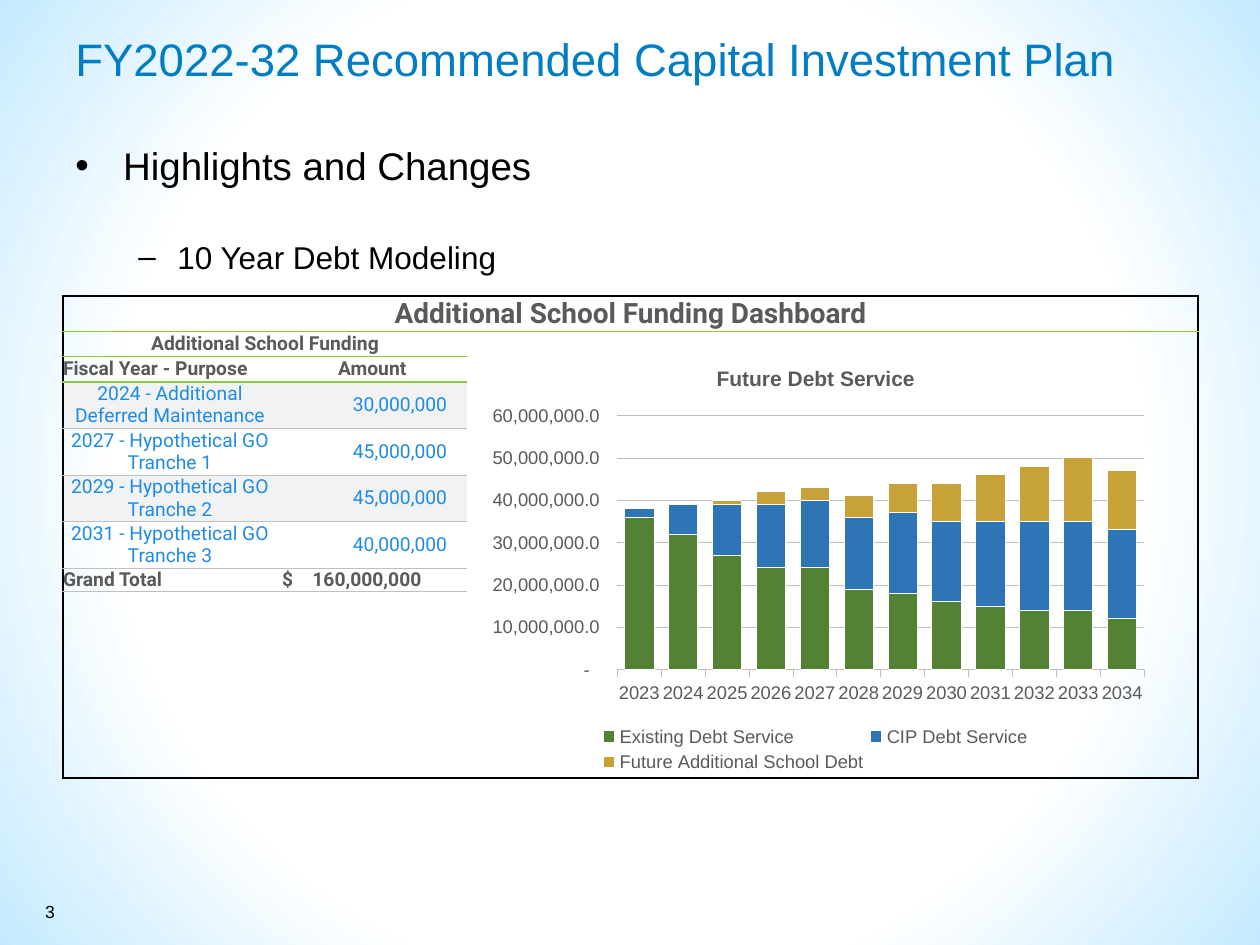
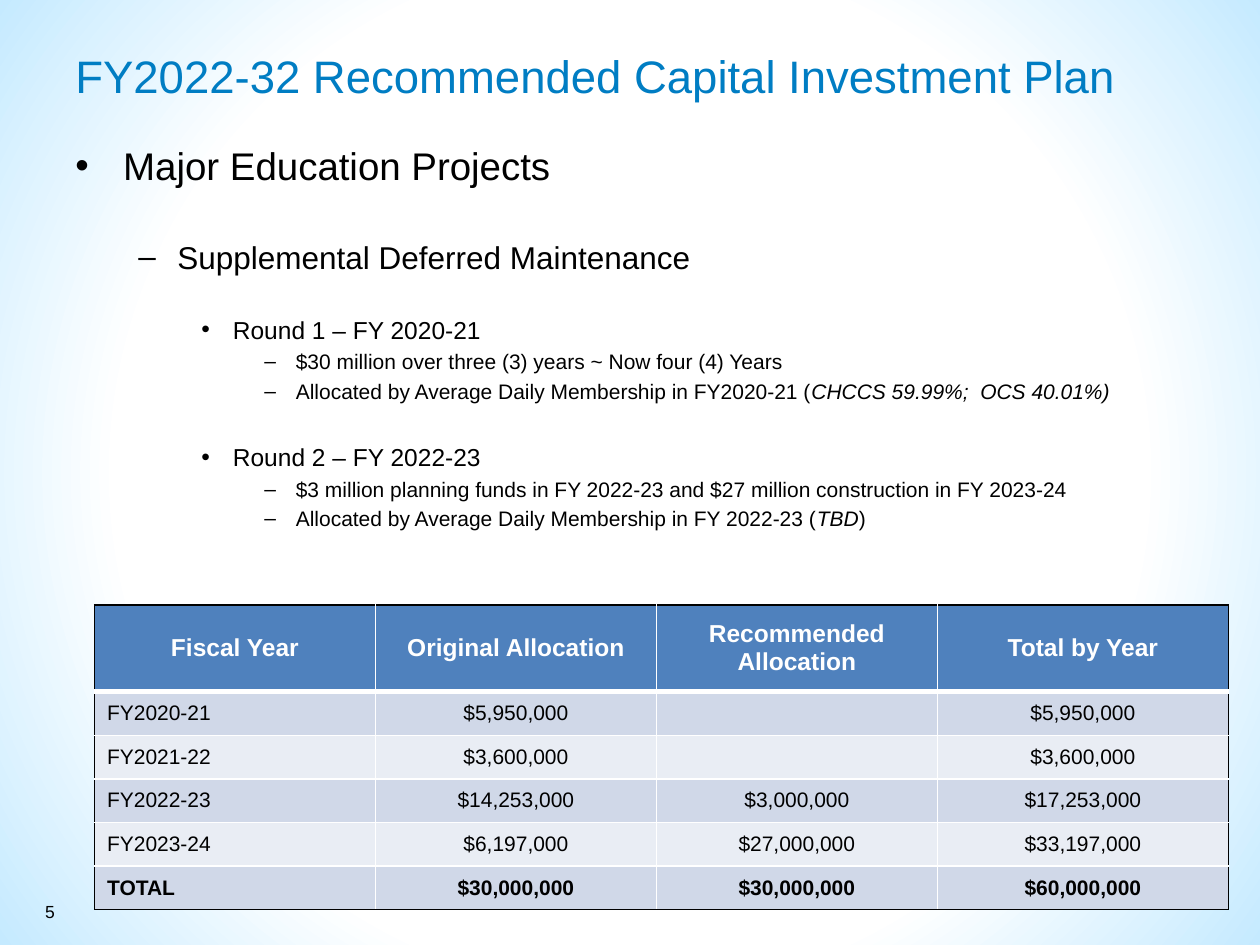
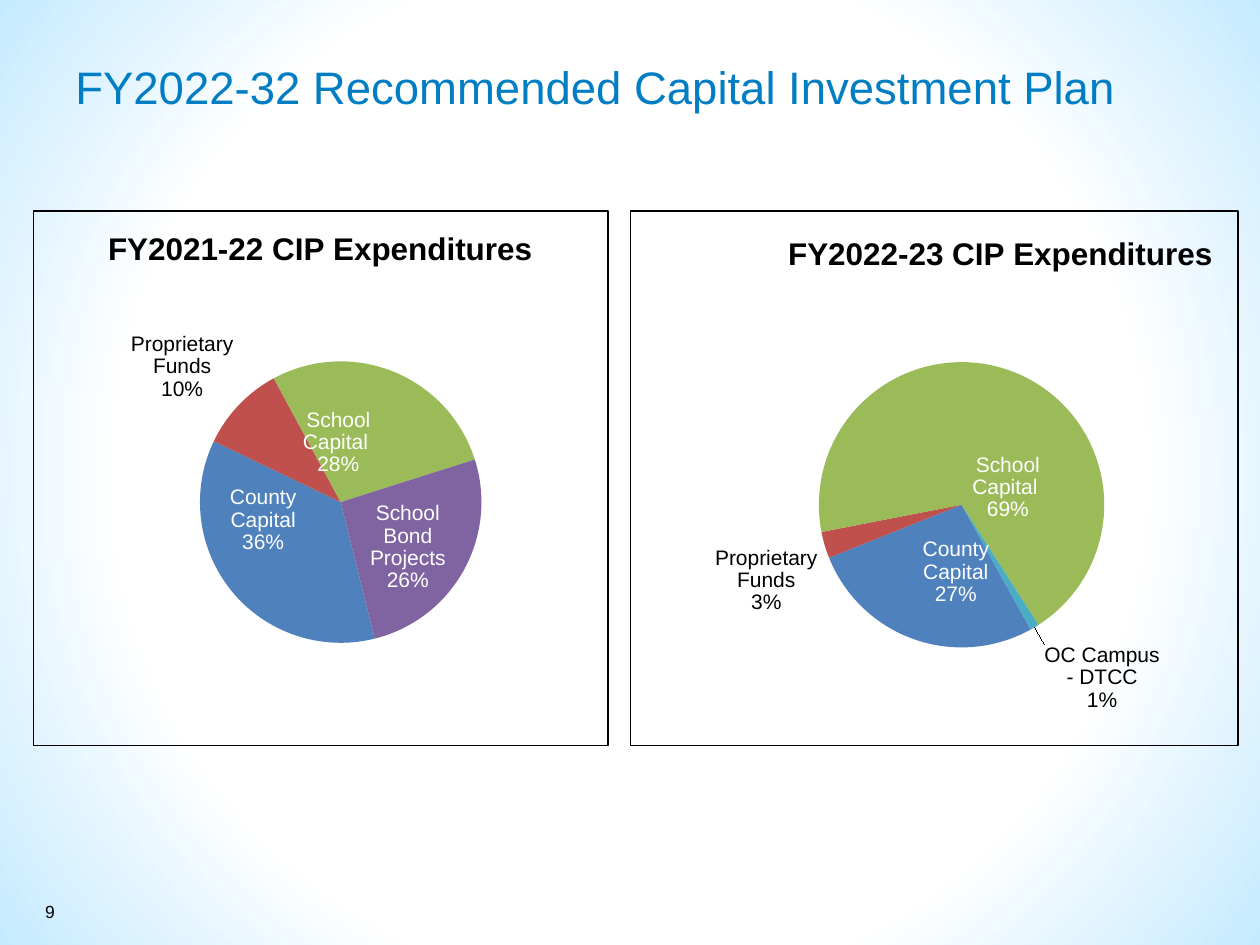
"""Builds three slides of a capital investment plan with tables and charts."""
from collections import defaultdict

from pptx import Presentation
from pptx.chart.data import CategoryChartData
from pptx.dml.color import RGBColor
from pptx.enum.chart import XL_CHART_TYPE as ChartType
from pptx.enum.chart import XL_LABEL_POSITION as LabelPosition
from pptx.enum.chart import XL_LEGEND_POSITION as LegendPosition
from pptx.enum.chart import XL_TICK_MARK as TickMark
from pptx.enum.text import MSO_ANCHOR as Anchor
from pptx.enum.text import PP_ALIGN as Align
from pptx.oxml import parse_xml
from pptx.oxml.ns import nsdecls, qn
from pptx.util import Inches, Pt

COLORS = {
    "black": "000000", "white": "FFFFFF", "sky": "C5EAFF", "title": "007DC3",
    "gray": "5A5A5A", "rule": "BFBFBF", "lime": "8DC63F", "link": "1F8BE5",
    "stripe": "F1F2F3", "header": "4F81BD", "band": "D0D8E8", "pale": "E9EDF4",
    "existing": "548235", "cip": "2E75B6", "future": "C7A239",
    "county": "4F81BD", "proprietary": "C0504D", "school": "9BBB59",
    "bond": "8064A2", "campus": "4BACC6",
}
SANS, DASHBOARD_FONT = "Arial", "Roboto"
NO_STYLE = "{2D5ABB26-0587-4C30-8999-92F81FD0307C}"
TITLE = "FY2022-32 Recommended Capital Investment Plan"

LEVELS = [
    {"size": 22, "left": 0.38, "hang": 0.38, "bullet": "•"},
    {"size": 18, "left": 0.81, "hang": 0.31, "bullet": "–"},
    {"size": 14, "left": 1.25, "hang": 0.25, "bullet": "•"},
    {"size": 12, "left": 1.75, "hang": 0.25, "bullet": "–"},
]
LINE_SPACE, BLANK_LINE = 0.22, 1.36

DEBT_OUTLINE = [
    (0, False, ["Highlights and Changes"]),
    (1, True, ["10 Year Debt Modeling"]),
]
EDUCATION_OUTLINE = [
    (0, False, ["Major Education Projects"]),
    (1, True, ["Supplemental Deferred Maintenance"]),
    (2, True, ["Round 1 – FY 2020-21"]),
    (3, False, ["$30 million over three (3) years ~ Now four (4) Years"]),
    (3, False, ["Allocated by Average Daily Membership in FY2020-21 (",
                "CHCCS 59.99%;  OCS 40.01%)"]),
    (2, True, ["Round 2 – FY 2022-23"]),
    (3, False, ["$3 million planning funds in FY 2022-23 and "
                "$27 million construction in FY 2023-24"]),
    (3, False, ["Allocated by Average Daily Membership in FY 2022-23 (", "TBD", ")"]),
]

FUNDING = [
    ("2024 - Additional Deferred Maintenance", "30,000,000"),
    ("2027 - Hypothetical GO Tranche 1", "45,000,000"),
    ("2029 - Hypothetical GO Tranche 2", "45,000,000"),
    ("2031 - Hypothetical GO Tranche 3", "40,000,000"),
]
FUNDING_COLUMNS = [0.79, 0.91, 1.51, 1.26, 0.91, 1.06, 1.1, 0.68, 0.79]
FUNDING_ROWS = [0.28, 0.2, 0.2] + [(3.83 - 0.68) / 17] * 17

DEBT_YEARS = [str(year) for year in range(2023, 2035)]
DEBT_MILLIONS = [
    ("Existing Debt Service", "existing", [36, 32, 27, 24, 24, 19, 18, 16, 15, 14, 14, 12]),
    ("CIP Debt Service", "cip", [2, 7, 12, 15, 16, 17, 19, 19, 20, 21, 21, 21]),
    ("Future Additional School Debt", "future", [0, 0, 1, 3, 3, 5, 7, 9, 11, 13, 15, 14]),
]
DEBT_FORMAT = '_(* #,##0.0_);_(* \\(#,##0.0\\);_(* "-"?_)'

ALLOCATIONS = [
    ("Fiscal Year", "Original Allocation", "Recommended Allocation", "Total by Year"),
    ("FY2020-21", "$5,950,000", "", "$5,950,000"),
    ("FY2021-22", "$3,600,000", "", "$3,600,000"),
    ("FY2022-23", "$14,253,000", "$3,000,000", "$17,253,000"),
    ("FY2023-24", "$6,197,000", "$27,000,000", "$33,197,000"),
    ("TOTAL", "$30,000,000", "$30,000,000", "$60,000,000"),
]

FUNDS = {
    "County Capital": "county", "Proprietary Funds": "proprietary",
    "School Capital ": "school", "School Bond Projects": "bond",
    "OC Campus - DTCC": "campus",
}
PIES = [
    {"title": "FY2021-22 CIP Expenditures", "box": (0.26, 1.67, 4.57, 4.25),
     "title_at": (0.12, 0.02), "plot": (0.29, 0.28, 0.49, 0.53), "start": 166,
     "values": [36, 10, 28, 26, 0],
     "labels": {0: (-0.04, -0.05), 1: None, 2: (-0.05, 0.01), 3: (0.01, 0.02)}},
    {"title": "FY2022-23 CIP Expenditures", "box": (5, 1.67, 4.83, 4.25),
     "title_at": (0.25, 0.03), "plot": (0.31, 0.28, 0.47, 0.54), "start": 151,
     "values": [27, 3, 69, None, 1],
     "labels": {0: (0.03, 0), 1: None, 2: (0.03, 0.09), 4: (0.01, 0.02)}},
]
OUTSIDE_FUNDS = (1, 4)


def rgb(name):
    return RGBColor.from_string(COLORS[name])


def set_font(font, size, color="black", bold=False, name=SANS):
    font.size, font.bold, font.name = Pt(size), bold, name
    font.color.rgb = rgb(color)


def set_background(master):
    master.background.fill.solid()
    solid = master.element.find(".//" + qn("p:bgPr")).find(qn("a:solidFill"))
    stops = "".join(
        f'<a:gs pos="{share * 1000}"><a:srgbClr val="{COLORS[color]}"/></a:gs>'
        for share, color in [(0, "white"), (65, "white"), (100, "sky")])
    gradient = parse_xml(
        f'<a:gradFill {nsdecls("a")} rotWithShape="1"><a:gsLst>{stops}</a:gsLst>'
        '<a:path path="circle"><a:fillToRect l="50000" t="50000" r="50000" b="50000"/>'
        '</a:path></a:gradFill>')
    solid.getparent().replace(solid, gradient)


def add_text_frame(slide, box):
    text_frame = slide.shapes.add_textbox(*map(Inches, box)).text_frame
    text_frame.word_wrap = True
    return text_frame


def add_slide(presentation, title_top, number):
    slide = presentation.slides.add_slide(presentation.slide_layouts[6])
    title = add_text_frame(slide, (0.5, title_top, 9, 0.7))
    title.text = TITLE
    set_font(title.paragraphs[0].runs[0].font, 26, "title")
    page = add_text_frame(slide, (0.26, 7.1, 0.32, 0.27))
    page.text = str(number)
    set_font(page.paragraphs[0].runs[0].font, 10)
    return slide


def add_outline(slide, items, height):
    text_frame = add_text_frame(slide, (0.5, 1.08, 9, height))
    for index, (depth, gap, segments) in enumerate(items):
        level = LEVELS[depth]
        paragraph = text_frame.add_paragraph() if index else text_frame.paragraphs[0]
        properties = paragraph._p.get_or_add_pPr()
        properties.set("marL", str(Inches(level["left"])))
        properties.set("indent", str(-Inches(level["hang"])))
        properties.append(parse_xml(f'<a:buFont {nsdecls("a")} typeface="{SANS}"/>'))
        properties.append(parse_xml(f'<a:buChar {nsdecls("a")} char="{level["bullet"]}"/>'))
        paragraph.level = depth
        if index:
            space = LINE_SPACE + (BLANK_LINE if gap else 0)
            paragraph.space_before = Pt(round(level["size"] * space, 1))
        for position, segment in enumerate(segments):
            run = paragraph.add_run()
            run.text = segment
            set_font(run.font, level["size"])
            run.font.italic = position % 2 == 1


def add_plain_table(slide, box, widths, heights):
    frame = slide.shapes.add_table(len(heights), len(widths), *map(Inches, box))
    table = frame.table
    table.first_row = table.horz_banding = False
    table._tbl.tblPr.find(qn("a:tableStyleId")).text = NO_STYLE
    for column, width in zip(table.columns, widths):
        column.width = Inches(width)
    for row, height in zip(table.rows, heights):
        row.height = Inches(height)
    return table


def grid_edges(row_count, column_count, outer, inner=None):
    edges = defaultdict(dict)
    for row in range(row_count):
        for column in range(column_count):
            on_rim = {"L": column == 0, "R": column == column_count - 1,
                      "T": row == 0, "B": row == row_count - 1}
            edges[row, column] = {side: outer if rim else inner
                                  for side, rim in on_rim.items()}
    return edges


def draw_edges(table, edges):
    for (row, column), lines in edges.items():
        properties = table.cell(row, column)._tc.get_or_add_tcPr()
        for side in "LRTB":
            color, width = lines[side] or (None, 0)
            paint = (f'<a:solidFill><a:srgbClr val="{COLORS[color]}"/></a:solidFill>'
                     if color else "<a:noFill/>")
            properties.append(parse_xml(
                f'<a:ln{side} {nsdecls("a")} w="{Pt(width)}">{paint}</a:ln{side}>'))


def fill_cell(cell, color):
    if color:
        cell.fill.solid()
        cell.fill.fore_color.rgb = rgb(color)
    else:
        cell.fill.background()


def write_cell(cell, text, align, size, color="black", bold=False, name=SANS):
    paragraph = cell.text_frame.paragraphs[0]
    paragraph.text, paragraph.alignment = text, align
    cell.vertical_anchor = Anchor.MIDDLE
    for run in paragraph.runs:
        set_font(run.font, size, color, bold, name)
    if not text:
        paragraph._p.get_or_add_endParaRPr().set("sz", str(size * 100))


def add_funding_table(slide):
    table = add_plain_table(slide, (0.5, 2.35, 9, 3.83), FUNDING_COLUMNS, FUNDING_ROWS)
    row_count, last_column = len(FUNDING_ROWS), len(FUNDING_COLUMNS) - 1
    total_row = 3 + 2 * len(FUNDING)
    purpose_rows = range(3, total_row, 2)

    edges = grid_edges(row_count, last_column + 1, ("black", 1))
    edges[0, 0]["R"] = ("black", 1)
    rules = [(0, 0, last_column, ("lime", 1)), (1, 1, 2, ("lime", 1)), (2, 2, 2, ("lime", 1))]
    rules += [(row, row + 1, 2, ("rule", 0.5)) for row in purpose_rows]
    rules.append((total_row, total_row, 2, ("rule", 0.5)))
    for first, last, end, line in rules:
        for column in range(end + 1):
            edges[first, column]["B"] = edges[last, column]["B"] = line
            edges[last + 1, column]["T"] = line
    draw_edges(table, edges)

    striped = {row + step for row in purpose_rows[::2] for step in (0, 1)}
    for row in range(row_count):
        for column in range(last_column + 1):
            cell = table.cell(row, column)
            cell.margin_left = cell.margin_right = cell.margin_top = cell.margin_bottom = 0
            fill_cell(cell, "stripe" if row in striped and column < 3 else None)
            write_cell(cell, "", Align.LEFT, 8)

    spans = [(0, 0, 0, last_column), (1, 0, 1, 2), (2, 0, 2, 1), (total_row, 0, total_row, 1)]
    for row in purpose_rows:
        spans += [(row, 0, row + 1, 1), (row, 2, row + 1, 2)]
    for top, left, bottom, right in spans:
        table.cell(top, left).merge(table.cell(bottom, right))

    headings = [
        (0, 0, "Additional School Funding Dashboard", Align.CENTER, 16),
        (1, 0, "Additional School Funding", Align.CENTER, 11),
        (2, 0, "Fiscal Year - Purpose", Align.LEFT, 11),
        (2, 2, "Amount", Align.CENTER, 11),
        (total_row, 0, "Grand Total", Align.LEFT, 11),
        (total_row, 2, "$\t160,000,000", Align.LEFT, 11),
    ]
    for row, column, text, align, size in headings:
        write_cell(table.cell(row, column), text, align, size, "gray", True, DASHBOARD_FONT)
    for row, (purpose, amount) in zip(purpose_rows, FUNDING):
        write_cell(table.cell(row, 0), purpose, Align.CENTER, 11, "link", name=DASHBOARD_FONT)
        write_cell(table.cell(row, 2), amount, Align.RIGHT, 11, "link", name=DASHBOARD_FONT)
        table.cell(row, 2).margin_right = Inches(0.16)

    total = table.cell(total_row, 2)
    total.margin_left = Inches(0.04)
    total.text_frame.paragraphs[0]._p.get_or_add_pPr().append(parse_xml(
        f'<a:tabLst {nsdecls("a")}><a:tab pos="{Inches(0.24)}" algn="l"/></a:tabLst>'))


def add_allocation_table(slide):
    widths, heights = [2.23] * 3 + [2.31], [0.69] + [(2.42 - 0.69) / 5] * 5
    table = add_plain_table(slide, (0.75, 4.8, 9, 2.42), widths, heights)
    edges = grid_edges(len(heights), len(widths), ("black", 1), ("white", 1))
    for column in range(len(widths)):
        edges[0, column]["B"] = edges[1, column]["T"] = ("white", 3)
    draw_edges(table, edges)
    last = len(ALLOCATIONS) - 1
    for row, values in enumerate(ALLOCATIONS):
        for column, value in enumerate(values):
            cell = table.cell(row, column)
            fill_cell(cell, "header" if row == 0 else "band" if row % 2 else "pale")
            align = Align.LEFT if row and column == 0 else Align.CENTER
            write_cell(cell, value, align, 12 if row else 14,
                       "black" if row else "white", row in (0, last))


def set_layout(element, position, x, y, width=None, height=None, inner=False):
    for old in element.findall(qn("c:layout")):
        element.remove(old)
    target = '<c:layoutTarget val="inner"/>' if inner else ""
    modes = '<c:xMode val="edge"/><c:yMode val="edge"/>' if position != "offset" else ""
    size = f'<c:w val="{width}"/><c:h val="{height}"/>' if width else ""
    element.insert(0 if inner else 1, parse_xml(
        f'<c:layout {nsdecls("c")}><c:manualLayout>{target}{modes}'
        f'<c:x val="{x}"/><c:y val="{y}"/>{size}</c:manualLayout></c:layout>'))


def add_titled_chart(slide, kind, box, data, title, size, color, plot, border=None):
    chart = slide.shapes.add_chart(kind, *map(Inches, box), data).chart
    set_font(chart.font, 10, color)
    chart.has_title = True
    chart.chart_title.text_frame.text = title
    set_font(chart.chart_title.text_frame.paragraphs[0].runs[0].font, size, color, True)
    line = f'<a:solidFill><a:srgbClr val="{COLORS[border]}"/></a:solidFill>' if border else "<a:noFill/>"
    body = chart._chartSpace.find(qn("c:chart"))
    body.addnext(parse_xml(
        f'<c:spPr {nsdecls("c", "a")}><a:noFill/><a:ln w="{Pt(0.75)}">{line}</a:ln></c:spPr>'))
    set_layout(body.find(qn("c:plotArea")), "edge", *plot, inner=True)
    return chart


def add_debt_chart(slide):
    data = CategoryChartData()
    data.categories = DEBT_YEARS
    for name, _, millions in DEBT_MILLIONS:
        data.add_series(name, [value * 1000000 for value in millions])
    chart = add_titled_chart(slide, ChartType.COLUMN_STACKED, (3.76, 2.75, 5.43, 3.42), data,
                             "Future Debt Service", 12, "gray", (0.21, 0.16, 0.77, 0.59))
    plot = chart.plots[0]
    plot.gap_width, plot.overlap, plot.vary_by_categories = 50, 100, False
    for series, (_, color, _) in zip(plot.series, DEBT_MILLIONS):
        series.format.fill.solid()
        series.format.fill.fore_color.rgb = rgb(color)
        series.format.line.color.rgb = rgb("white")
        series.format.line.width = Pt(0.5)
    years, dollars = chart.category_axis, chart.value_axis
    for axis in (years, dollars):
        set_font(axis.tick_labels.font, 10.5, "gray")
        axis.major_tick_mark = TickMark.OUTSIDE
    years.format.line.color.rgb = rgb("rule")
    years.format.line.width = Pt(0.5)
    dollars.format.line.fill.background()
    dollars.minimum_scale, dollars.maximum_scale, dollars.major_unit = 0, 60000000, 10000000
    dollars.tick_labels.number_format = DEBT_FORMAT
    dollars.tick_labels.number_format_is_linked = False
    dollars.major_gridlines.format.line.color.rgb = rgb("rule")
    dollars.major_gridlines.format.line.width = Pt(0.25)
    chart.has_legend = True
    chart.legend.position = LegendPosition.BOTTOM
    chart.legend.include_in_layout = False
    set_font(chart.legend.font, 10.5, "gray")
    set_layout(chart.legend._element, "edge", 0.18, 0.87, 0.64, 0.13)


def label_fund(point, outside, shift):
    label = point.data_label
    label.position = LabelPosition.OUTSIDE_END if outside else LabelPosition.CENTER
    set_font(label.font, 12, "black" if outside else "white")
    element = label._get_or_add_dLbl()
    for tag, shown in [("c:showVal", 0), ("c:showCatName", 1), ("c:showPercent", 1)]:
        element.find(qn(tag)).set("val", str(shown))
    element.append(parse_xml(f'<c:separator {nsdecls("c")}>\n</c:separator>'))
    if shift:
        set_layout(element, "offset", *shift)


def add_pie(slide, pie):
    data = CategoryChartData()
    data.categories = list(FUNDS)
    data.add_series("Series 1", pie["values"])
    chart = add_titled_chart(slide, ChartType.PIE, pie["box"], data, pie["title"], 18,
                             "black", pie["plot"], "black")
    set_layout(chart.chart_title._element, "edge", *pie["title_at"])
    chart.has_legend = False
    plot = chart.plots[0]
    plot.vary_by_categories = True
    for old in plot._element.findall(qn("c:firstSliceAng")):
        plot._element.remove(old)
    plot._element.append(parse_xml(f'<c:firstSliceAng {nsdecls("c")} val="{pie["start"]}"/>'))
    series = plot.series[0]
    labels = series.data_labels
    labels.show_value = labels.show_percentage = labels.show_category_name = False
    labels.number_format, labels.number_format_is_linked = "0%", False
    for index, color in enumerate(FUNDS.values()):
        point = series.points[index]
        point.format.fill.solid()
        point.format.fill.fore_color.rgb = rgb(color)
        if index in pie["labels"]:
            label_fund(point, index in OUTSIDE_FUNDS, pie["labels"][index])


def main():
    presentation = Presentation()
    presentation.slide_width, presentation.slide_height = Inches(10), Inches(7.5)
    set_background(presentation.slide_master)

    debt = add_slide(presentation, 0.2, 3)
    add_outline(debt, DEBT_OUTLINE, 5.33)
    add_funding_table(debt)
    add_debt_chart(debt)

    education = add_slide(presentation, 0.33, 5)
    add_outline(education, EDUCATION_OUTLINE, 5.83)
    add_allocation_table(education)

    expenditures = add_slide(presentation, 0.42, 9)
    for pie in PIES:
        add_pie(expenditures, pie)

    presentation.save("out.pptx")


if __name__ == "__main__":
    main()
